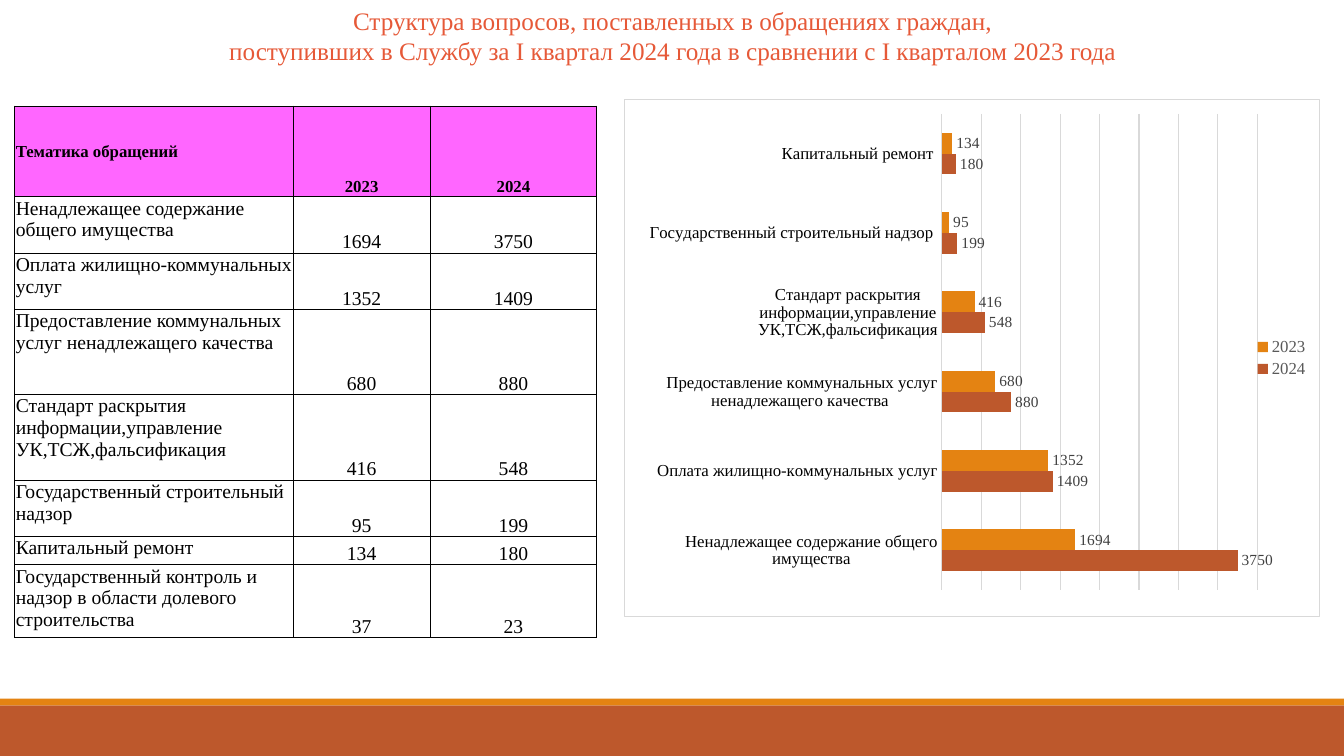
from lxml.etree import SubElement
from pptx import Presentation
from pptx.chart.data import CategoryChartData as ChartData
from pptx.dml.color import RGBColor
from pptx.enum.chart import XL_CHART_TYPE as Kind, XL_LABEL_POSITION as Spot
from pptx.enum.chart import XL_LEGEND_POSITION as Side, XL_TICK_MARK as Tick
from pptx.enum.shapes import MSO_SHAPE as Shape
from pptx.enum.text import MSO_ANCHOR as Anchor, PP_ALIGN as Align
from pptx.oxml import parse_xml
from pptx.oxml.ns import nsdecls, qn
from pptx.util import Inches, Pt

RUST = RGBColor(0xBD, 0x58, 0x2C)
AMBER = RGBColor(0xE4, 0x83, 0x12)
CORAL = RGBColor(0xE6, 0x59, 0x38)
PINK = RGBColor(0xFF, 0x66, 0xFF)
BLACK = RGBColor(0, 0, 0)
DARK = RGBColor(0x40, 0x40, 0x40)
GRAY = RGBColor(0x59, 0x59, 0x59)
PALE = RGBColor(0xD9, 0xD9, 0xD9)
FACE = "Times New Roman"
WIDE, HIGH = Inches(13.33), Inches(7.5)

TITLE = (
    "Структура вопросов, поставленных в обращениях граждан,",
    "поступивших в Службу за I квартал 2024 года в сравнении с I кварталом 2023 года",
)
HEAD = ("Тематика обращений", "2023", "2024")
TOPICS = (
    ("Ненадлежащее содержание общего имущества", 1694, 3750),
    ("Оплата жилищно-коммунальных услуг", 1352, 1409),
    ("Предоставление коммунальных услуг ненадлежащего качества", 680, 880),
    ("Стандарт раскрытия информации,управление УК,ТСЖ,фальсификация", 416, 548),
    ("Государственный строительный надзор", 95, 199),
    ("Капитальный ремонт", 134, 180),
    ("Государственный контроль и надзор в области долевого строительства", 37, 23),
)
COLS = (2.76, 1.36, 1.65)
ROWS = (0.9, 0.56, 0.56, 0.84, 0.85, 0.56, 0.28, 0.72)
PLOT = {"x": 0.457, "y": 0.028, "w": 0.454, "h": 0.921}


def area(left, top, width, height):
    return (int(WIDE * left), int(HIGH * top), int(WIDE * width), int(HIGH * height))


def style(font, size, color, bold=False):
    font.name = FACE
    font.size = Pt(size)
    font.color.rgb = color
    font.bold = bold


def add_bar(slide, box, color):
    bar = slide.shapes.add_shape(Shape.RECTANGLE, *box)
    bar.shadow.inherit = False
    bar.fill.solid()
    bar.fill.fore_color.rgb = color
    bar.line.fill.background()


def add_title(slide, box):
    title = slide.shapes.title
    title.left, title.top, title.width, title.height = box
    frame = title.text_frame
    frame.text = "\n".join(TITLE)
    frame.vertical_anchor = Anchor.TOP
    for para in frame.paragraphs:
        para.alignment = Align.CENTER
        style(para.font, 18, CORAL)


def add_edges(cell):
    props = cell._tc.get_or_add_tcPr()
    for side in ("lnL", "lnR", "lnT", "lnB"):
        edge = SubElement(props, qn(f"a:{side}"), w=str(Pt(0.5)))
        fill = SubElement(edge, qn("a:solidFill"))
        SubElement(fill, qn("a:srgbClr"), val=str(BLACK))


def fill_cell(cell, text, row, col):
    add_edges(cell)
    cell.margin_left = cell.margin_right = cell.margin_top = Inches(0.01)
    cell.margin_bottom = 0
    cell.text = str(text)
    para = cell.text_frame.paragraphs[0]
    if row == 0:
        cell.fill.solid()
        cell.fill.fore_color.rgb = PINK
        style(para.font, 12, BLACK, True)
    else:
        cell.fill.background()
        style(para.font, 14, BLACK)
    if col:
        cell.vertical_anchor = Anchor.BOTTOM
        para.alignment = Align.CENTER
    else:
        cell.vertical_anchor = Anchor.TOP if row else Anchor.MIDDLE
        para.alignment = Align.LEFT if row else Align.JUSTIFY


def add_topics(slide, box):
    table = slide.shapes.add_table(len(ROWS), len(COLS), *box).table
    table.first_row = table.horz_banding = False
    for col, share in zip(table.columns, COLS):
        col.width = int(box[2] * share / sum(COLS))
    for row, share in zip(table.rows, ROWS):
        row.height = int(box[3] * share / sum(ROWS))
    for i, texts in enumerate((HEAD, *TOPICS)):
        for j, text in enumerate(texts):
            fill_cell(table.cell(i, j), text, i, j)


def frame_chart(chart):
    root = chart._chartSpace
    root.find(qn("c:chart")).addnext(parse_xml(
        f'<c:spPr {nsdecls("c", "a")}>'
        '<a:solidFill><a:srgbClr val="FFFFFF"/></a:solidFill>'
        f'<a:ln w="{Pt(0.75)}"><a:solidFill><a:srgbClr val="{PALE}"/></a:solidFill></a:ln>'
        '</c:spPr>'))
    plot = root.find(".//" + qn("c:plotArea"))
    for old in plot.findall(qn("c:layout")):
        plot.remove(old)
    layout = parse_xml(f'<c:layout {nsdecls("c")}/>')
    manual = SubElement(layout, qn("c:manualLayout"))
    SubElement(manual, qn("c:layoutTarget"), val="inner")
    for key in "xy":
        SubElement(manual, qn(f"c:{key}Mode"), val="edge")
    for key, share in PLOT.items():
        SubElement(manual, qn(f"c:{key}"), val=str(share))
    plot.insert(0, layout)


def style_axes(chart):
    topics, values = chart.category_axis, chart.value_axis
    topics.major_tick_mark = topics.minor_tick_mark = Tick.NONE
    style(topics.tick_labels.font, 12, BLACK)
    values.visible = False
    values.minimum_scale, values.maximum_scale, values.major_unit = 0, 4000, 500
    for line in (topics.format.line, values.major_gridlines.format.line):
        line.color.rgb = PALE
        line.width = Pt(0.75)


def add_counts(slide, box):
    shown = TOPICS[:-1]
    tails = ("", "", " ", "", " ", " ")
    data = ChartData()
    data.categories = [topic[0] + tail for topic, tail in zip(shown, tails)]
    for col in (2, 1):
        data.add_series(HEAD[col], [topic[col] for topic in shown])
    chart = slide.shapes.add_chart(Kind.BAR_CLUSTERED, *box, data).chart
    chart.has_title = False
    chart.font.name = "Calibri"
    chart.font.size = Pt(10)
    chart.font.color.rgb = BLACK
    chart.has_legend = True
    chart.legend.position = Side.RIGHT
    chart.legend.include_in_layout = False
    style(chart.legend.font, 12, GRAY)
    style_axes(chart)
    plot = chart.plots[0]
    plot.gap_width = 182
    plot.overlap = 0
    plot.vary_by_categories = False
    for series, color in zip(plot.series, (RUST, AMBER)):
        series.format.fill.solid()
        series.format.fill.fore_color.rgb = color
        labels = series.data_labels
        labels.show_value = True
        labels.position = Spot.OUTSIDE_END
        style(labels.font, 11, DARK)
    frame_chart(chart)


def main():
    deck = Presentation()
    deck.slide_width, deck.slide_height = WIDE, HIGH
    slide = deck.slides.add_slide(deck.slide_layouts[5])
    add_bar(slide, area(0, 0.933, 1, 0.067), RUST)
    add_bar(slide, area(0, 0.924, 1, 0.009), AMBER)
    add_title(slide, area(0.003, 0, 0.995, 0.095))
    add_counts(slide, area(0.464, 0.131, 0.518, 0.685))
    add_topics(slide, area(0.011, 0.14, 0.433, 0.703))
    deck.save("out.pptx")


if __name__ == "__main__":
    main()
